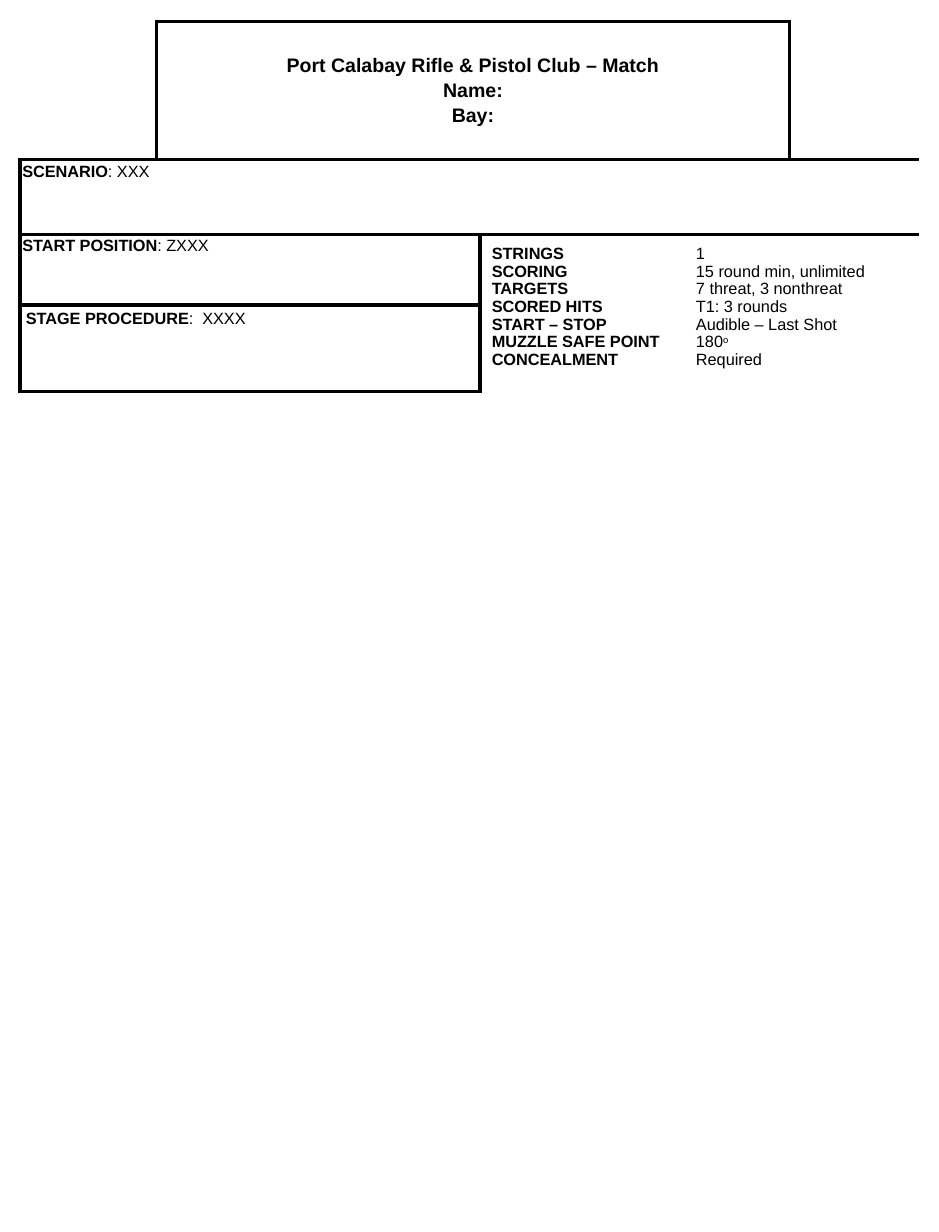
from lxml.etree import SubElement
from pptx import Presentation
from pptx.dml.color import RGBColor
from pptx.enum.text import MSO_ANCHOR as ANCHOR, PP_ALIGN as ALIGN
from pptx.oxml.ns import qn
from pptx.util import Inches, Pt

BLACK = RGBColor(0x00, 0x00, 0x00)
WHITE = RGBColor(0xFF, 0xFF, 0xFF)

COLS = [1.16, 2.76, 1.74, 0.9, 1.1]
ROWS = [1.18, 0.64, 0.6, 0.74]
HEAVY, THIN = 2.25, 0.5
FRAME = dict.fromkeys("LRTB", HEAVY)

SPECS = [
    ("STRINGS", "1"),
    ("SCORING", "15 round min, unlimited"),
    ("TARGETS", "7 threat, 3 nonthreat"),
    ("SCORED HITS", "T1: 3 rounds"),
    ("START – STOP", "Audible – Last Shot"),
    ("MUZZLE SAFE POINT", "180^o"),
    ("CONCEALMENT", "Required"),
]


class StageSheet:
    font = "Arial"

    def __init__(self, slide):
        self.slide = slide

    def add_table(self, left, top):
        shape = self.slide.shapes.add_table(
            len(ROWS), len(COLS), Inches(left), Inches(top),
            Inches(sum(COLS)), Inches(sum(ROWS)))
        self.table = shape.table
        self.table.first_row = self.table.horz_banding = False
        for column, width in zip(self.table.columns, COLS):
            column.width = Inches(width)
        for row, height in zip(self.table.rows, ROWS):
            row.height = Inches(height)

    def border(self, cell, side, width):
        """Draw one edge of a cell; a width of 0 leaves it blank."""
        tcPr = cell._tc.get_or_add_tcPr()
        ln = SubElement(tcPr, qn(f"a:ln{side}"), w=str(Pt(width)))
        if width:
            fill = SubElement(ln, qn("a:solidFill"))
            SubElement(fill, qn("a:srgbClr"), val=str(BLACK))
        else:
            SubElement(ln, qn("a:noFill"))

    def cell(self, row, col, edges, rows=1, cols=1, inset=(0.05, 0.05),
             anchor=ANCHOR.TOP):
        """Merge a block, outline its outer edges and return its first cell."""
        last_row, last_col = row + rows - 1, col + cols - 1
        for r in range(row, last_row + 1):
            for c in range(col, last_col + 1):
                part = self.table.cell(r, c)
                outer = {"L": c == col, "R": c == last_col,
                         "T": r == row, "B": r == last_row}
                for side, is_outer in outer.items():
                    self.border(part, side, edges.get(side, 0) if is_outer else 0)
                part.fill.solid()
                part.fill.fore_color.rgb = WHITE
        first = self.table.cell(row, col)
        if rows * cols > 1:
            first.merge(self.table.cell(last_row, last_col))
        first.margin_left = first.margin_right = Inches(inset[0])
        first.margin_top = first.margin_bottom = Inches(inset[1])
        first.vertical_anchor = anchor
        return first

    def add_lines(self, cell, lines, size=10, bold=False, before=0.8, spacing=0.9,
                  align=ALIGN.LEFT):
        """Add one paragraph per line; text after ^ is superscript."""
        tf = cell.text_frame
        for i, line in enumerate(lines):
            p = tf.paragraphs[0] if i == 0 else tf.add_paragraph()
            p.alignment = align
            p.line_spacing, p.space_before = spacing, Pt(before)
            p.font.name, p.font.size, p.font.bold = self.font, Pt(size), bold
            p.font.color.rgb = BLACK
            base, _, raised = line.partition("^")
            p.add_run().text = base
            if raised:
                r = p.add_run()
                r.text = raised
                r.font._element.set("baseline", "30000")

    def add_field(self, cell, label, value, before):
        self.add_lines(cell, [label], before=before)
        p = cell.text_frame.paragraphs[0]
        p.runs[0].font.bold = True
        p.add_run().text = value


def main():
    prs = Presentation()
    prs.slide_width, prs.slide_height = Inches(8), Inches(10.5)
    sheet = StageSheet(prs.slides.add_slide(prs.slide_layouts[6]))
    sheet.add_table(0.17, 0.18)

    sheet.cell(0, 0, {"R": HEAVY, "B": HEAVY})
    title = sheet.cell(0, 1, FRAME, cols=3, anchor=ANCHOR.MIDDLE)
    sheet.add_lines(title, ["Port Calabay Rifle & Pistol Club – Match", "Name:", "Bay:"],
                    size=12, bold=True, before=1.8, spacing=1.0, align=ALIGN.CENTER)
    sheet.cell(0, 4, {"L": HEAVY, "B": HEAVY})

    scenario = sheet.cell(1, 0, FRAME, cols=5, inset=(0.02, 0.04))
    sheet.add_field(scenario, "SCENARIO", ": XXX", before=1)
    start = sheet.cell(2, 0, FRAME, cols=2, inset=(0.02, 0.03))
    sheet.add_field(start, "START POSITION", ": ZXXX", before=0.5)
    procedure = sheet.cell(3, 0, FRAME, cols=2)
    sheet.add_field(procedure, "STAGE PROCEDURE", ":  XXXX", before=2)

    labels, values = zip(*SPECS)
    ends = {"T": HEAVY, "B": HEAVY}
    label_cell = sheet.cell(2, 2, {"L": HEAVY, **ends}, rows=2, inset=(0.1, 0.1))
    sheet.add_lines(label_cell, labels, bold=True)
    value_cell = sheet.cell(2, 3, {"R": THIN, **ends}, rows=2, cols=2, inset=(0.1, 0.1))
    sheet.add_lines(value_cell, values)

    prs.save("out.pptx")


if __name__ == "__main__":
    main()
